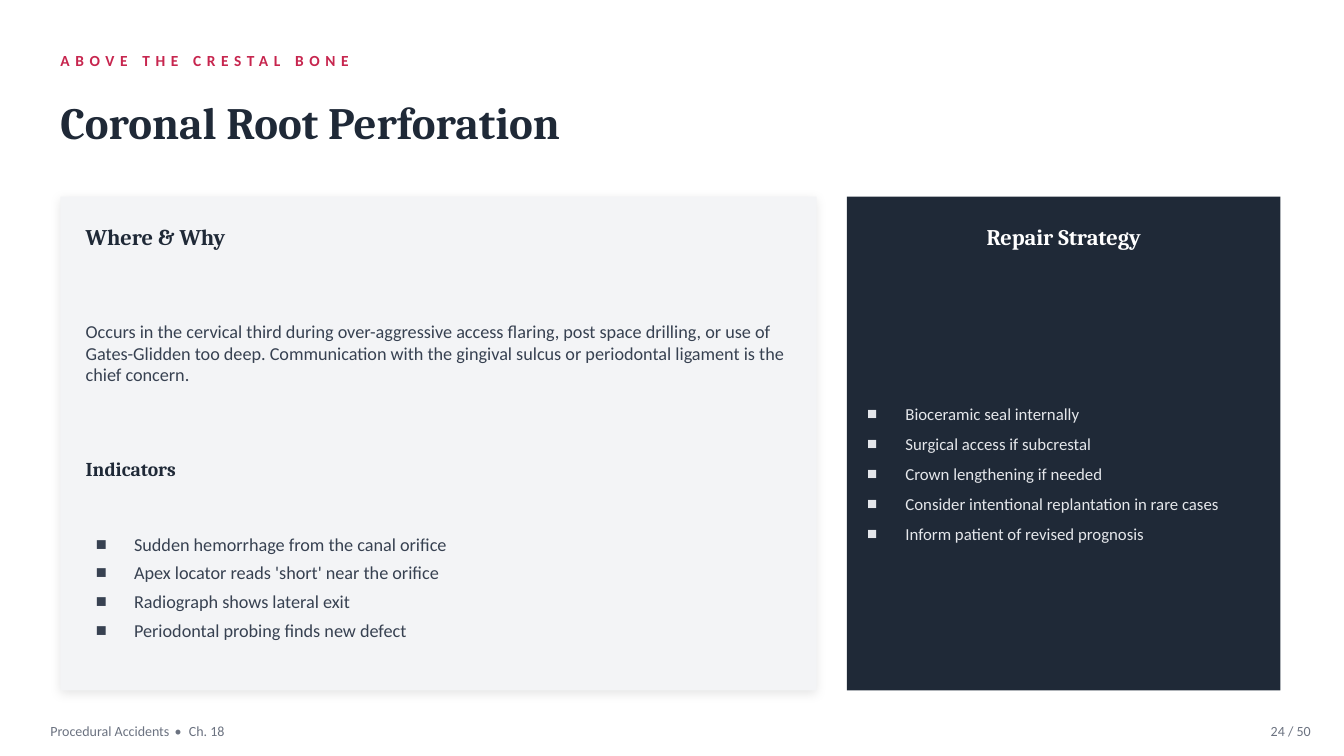
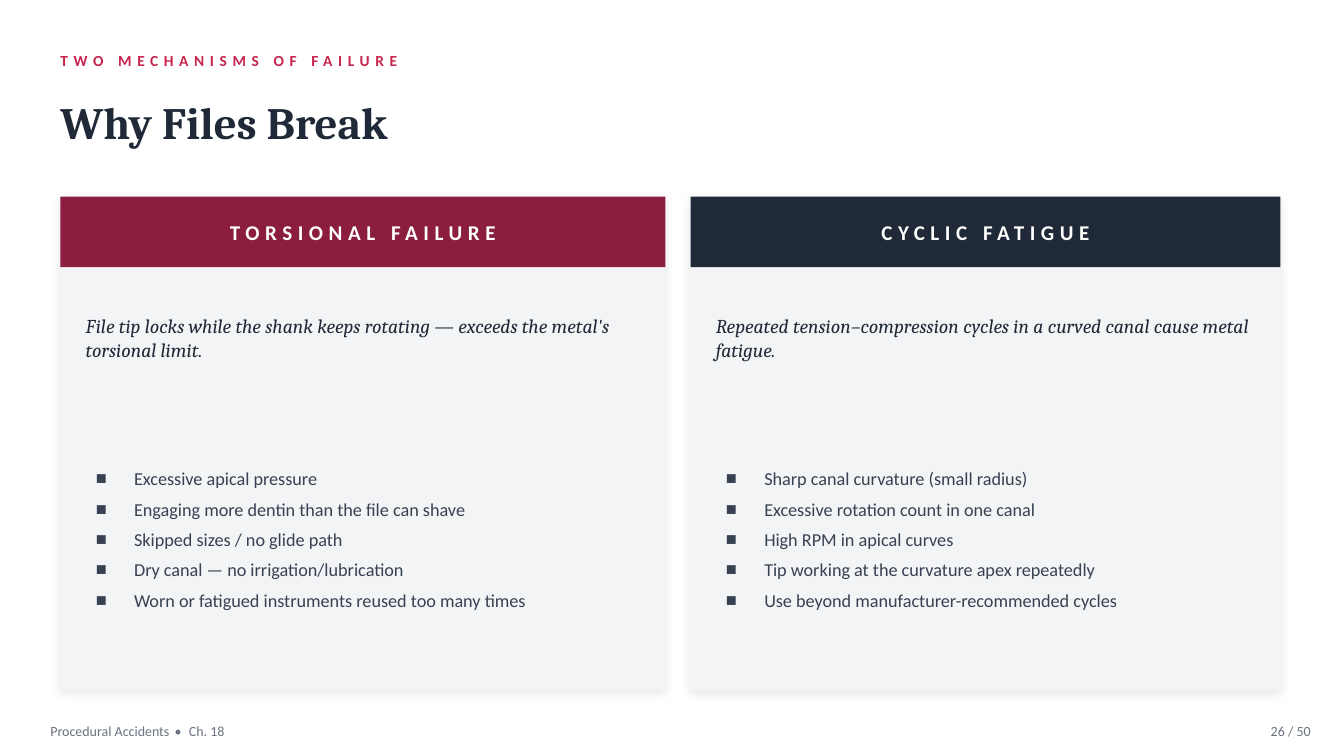
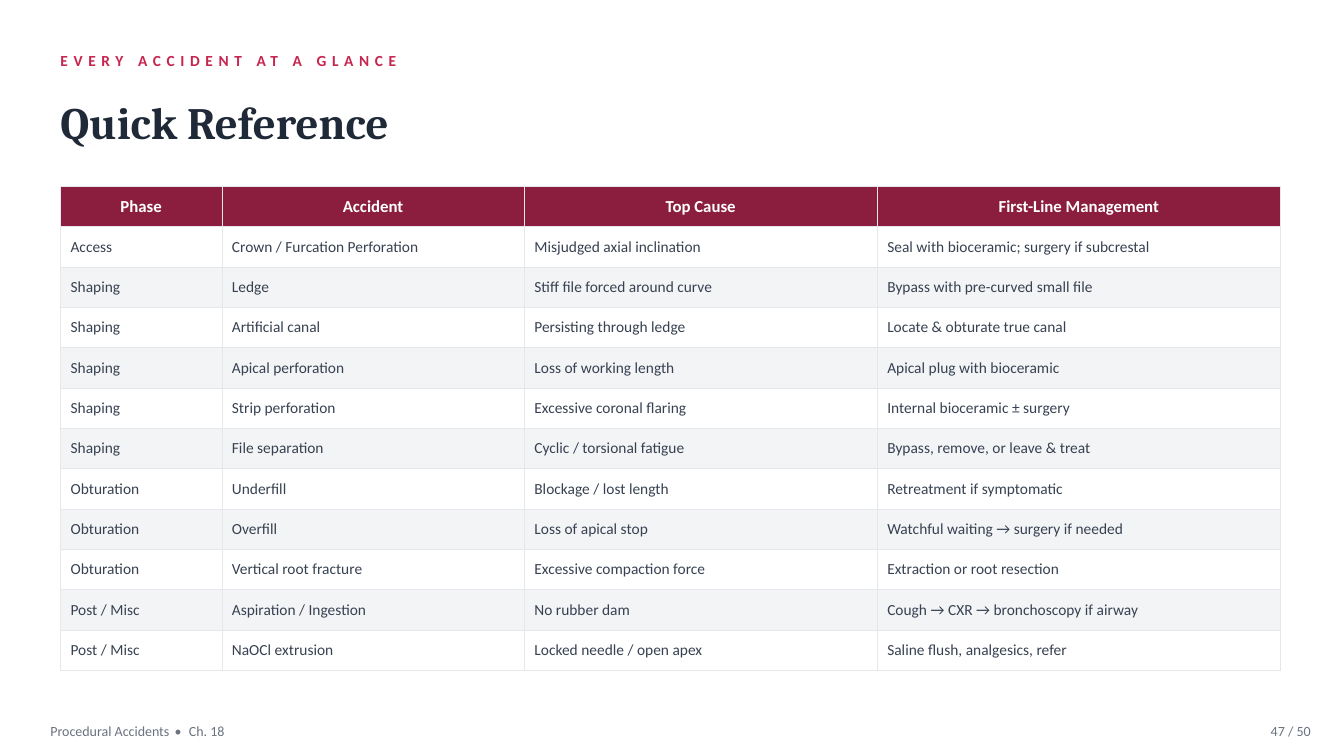
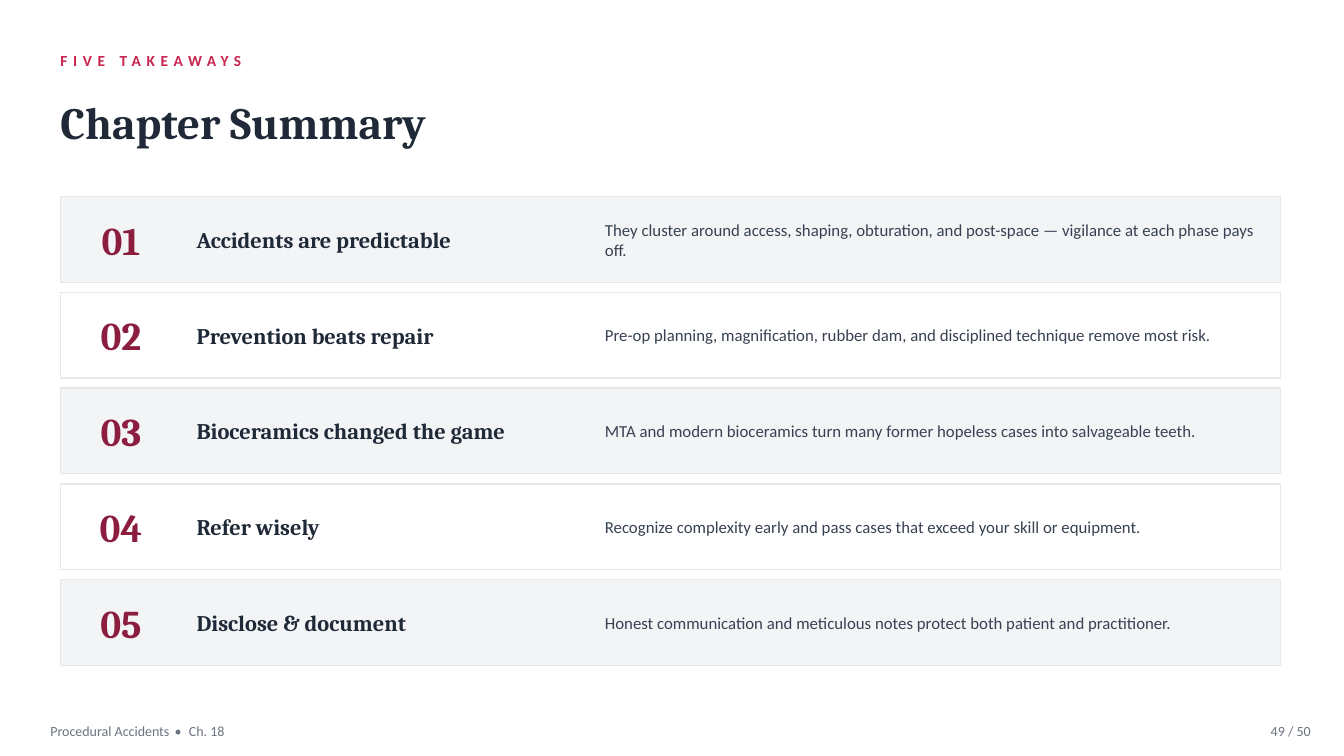
from lxml.etree import SubElement
from pptx import Presentation
from pptx.dml.color import RGBColor
from pptx.enum.shapes import MSO_SHAPE
from pptx.enum.text import MSO_ANCHOR, MSO_AUTO_SIZE, PP_ALIGN
from pptx.oxml.ns import qn
from pptx.util import Inches, Pt

# Palette and fonts
WHITE = RGBColor(0xFF, 0xFF, 0xFF)
PANEL = RGBColor(0xF3, 0xF4, 0xF6)
RULE = RGBColor(0xE5, 0xE7, 0xEB)
MUTED = RGBColor(0x6B, 0x72, 0x80)
BODY = RGBColor(0x37, 0x41, 0x51)
NAVY = RGBColor(0x1F, 0x29, 0x37)
WINE = RGBColor(0x8B, 0x1E, 0x3F)
PINK = RGBColor(0xC7, 0x25, 0x4E)
SANS, SERIF = "Calibri", "Cambria"

# Grid: ten columns and ten rows to the inch
CELL = Inches(0.1)
LEFT, CONTENT_WIDTH = 6, 121
PANEL_TOP, PANEL_HEIGHT = 19.5, 49
PADDING = 2.5

# Layouts of the default template
TWO_CONTENT, TITLE_ONLY = 3, 5


def grid(*cells):
    """Turn columns and rows into slide lengths."""
    return [round(cell * CELL) for cell in cells]


def write(frame, paragraphs, size=13, font=SANS, color=BODY, bold=False, italic=False,
          align=PP_ALIGN.LEFT, spacing=0, gap=0, bullet=None):
    """Fill a text frame; a paragraph is a string or a list of (text, spacing) runs."""
    frame.word_wrap = True
    frame.auto_size = MSO_AUTO_SIZE.NONE
    frame.vertical_anchor = MSO_ANCHOR.MIDDLE
    frame.margin_left = frame.margin_right = frame.margin_top = frame.margin_bottom = 0
    for index, content in enumerate(paragraphs):
        paragraph = frame.add_paragraph() if index else frame.paragraphs[0]
        paragraph.alignment = align
        paragraph.space_before, paragraph.space_after = Pt(0), Pt(gap)
        if bullet:
            properties = paragraph._p.get_or_add_pPr()
            properties.set("marL", str(Inches(0.38)))
            properties.set("indent", str(-Inches(0.38)))
            SubElement(properties, qn("a:buChar"), char=bullet)
        for text, run_spacing in [(content, spacing)] if isinstance(content, str) else content:
            run = paragraph.add_run()
            run.text = text
            run.font.size, run.font.name = Pt(size), font
            run.font.bold, run.font.italic = bold, italic
            run.font.color.rgb = color
            if run_spacing:
                run._r.get_or_add_rPr().set("spc", str(round(run_spacing * 100)))


class Deck:
    """Holds the presentation, its style and the current slide."""

    def __init__(self):
        self.presentation = Presentation()
        self.presentation.slide_width = Inches(13.33)
        self.presentation.slide_height = Inches(7.5)
        self.slide = None
        self.bodies = None

    def start(self, layout, kicker, title, page):
        """Add a slide with its kicker, title and footer."""
        self.slide = self.presentation.slides.add_slide(
            self.presentation.slide_layouts[layout])
        self.bodies = iter(list(self.slide.placeholders)[1:])
        self.text(kicker, (LEFT, 4.5, 120, 3), size=11, color=PINK, bold=True, spacing=4)
        self.fill_placeholder(self.slide.shapes.title, [title], (LEFT, 7.8, 120, 8.5),
                              size=32, font=SERIF, color=NAVY, bold=True)
        self.text([("Procedural Accidents", 0), (" • ", 1.5), ("Ch. 18", 0)],
                  (5, 71, 55, 3), size=10, color=MUTED)
        self.text(f"{page} / 50", (123, 71, 7, 3), size=10, color=MUTED,
                  align=PP_ALIGN.RIGHT)

    def text(self, content, box, **style):
        write(self.slide.shapes.add_textbox(*grid(*box)).text_frame, [content], **style)

    def heading(self, content, box, size=16, color=NAVY, **style):
        self.text(content, box, size=size, font=SERIF, color=color, bold=True, **style)

    def fill_placeholder(self, placeholder, paragraphs, box, **style):
        """Place a template placeholder in front of what is drawn so far."""
        placeholder.left, placeholder.top, placeholder.width, placeholder.height = grid(*box)
        placeholder.element.getparent().append(placeholder.element)
        write(placeholder.text_frame, paragraphs, **style)

    def bullets(self, items, box, **style):
        self.fill_placeholder(next(self.bodies), items, box, bullet="■", **style)

    def rectangle(self, box, fill, line=None, shadow=False):
        shape = self.slide.shapes.add_shape(MSO_SHAPE.RECTANGLE, *grid(*box))
        shape.shadow.inherit = False
        shape.fill.solid()
        shape.fill.fore_color.rgb = fill
        if line is None:
            shape.line.fill.background()
        else:
            shape.line.color.rgb, shape.line.width = line, Pt(1)
        if shadow:
            effects = shape._element.spPr.find(qn("a:effectLst"))
            outer = SubElement(effects, qn("a:outerShdw"), blurRad=str(Pt(8)),
                               dist=str(Pt(2)), dir="5400000", rotWithShape="0")
            black = SubElement(outer, qn("a:srgbClr"), val="000000")
            SubElement(black, qn("a:alpha"), val="10000")
        return shape

    def panel(self, left, width):
        self.rectangle((left, PANEL_TOP, width, PANEL_HEIGHT), PANEL, shadow=True)

    def failure_card(self, left, width, color, name, cause, factors):
        """A panel with a coloured band, a cause and a list of factors."""
        self.panel(left, width)
        band = self.rectangle((left, PANEL_TOP, width, 7), color)
        write(band.text_frame, [name], size=15, color=WHITE, bold=True, spacing=4,
              align=PP_ALIGN.CENTER)
        text_width = width - 2 * PADDING + 0.5
        self.text(cause, (left + PADDING, 28.5, text_width, 10), size=14, font=SERIF,
                  color=NAVY, italic=True)
        self.bullets(factors, (left + PADDING + 1, 40, text_width, 27), gap=6)

    def table(self, rows, widths, top, row_height):
        table = self.slide.shapes.add_table(
            len(rows), len(widths),
            *grid(LEFT, top, sum(widths), row_height * len(rows))).table
        table.first_row = table.horz_banding = False
        for column, width in zip(table.columns, grid(*widths)):
            column.width = width
        for row_index, values in enumerate(rows):
            table.rows[row_index].height = grid(row_height)[0]
            for column_index, value in enumerate(values):
                cell = table.cell(row_index, column_index)
                margins = (cell.margin_left, cell.margin_right,
                           cell.margin_top, cell.margin_bottom)
                if row_index == 0:
                    fill = WINE
                    style = dict(size=12, color=WHITE, bold=True, align=PP_ALIGN.CENTER)
                else:
                    fill = WHITE if row_index % 2 else PANEL
                    style = dict(size=11)
                self.cell_text(cell, value, margins, style)
                self.cell_borders(cell)
                cell.fill.solid()
                cell.fill.fore_color.rgb = fill

    @staticmethod
    def cell_text(cell, value, margins, style):
        write(cell.text_frame, [value], **style)
        body = cell.text_frame._txBody.bodyPr
        body.attrib.clear()
        for child in list(body):
            body.remove(child)
        cell.vertical_anchor = MSO_ANCHOR.MIDDLE
        (cell.margin_left, cell.margin_right,
         cell.margin_top, cell.margin_bottom) = margins

    @staticmethod
    def cell_borders(cell):
        properties = cell._tc.get_or_add_tcPr()
        for side in ("lnL", "lnR", "lnT", "lnB"):
            line = SubElement(properties, qn(f"a:{side}"), w=str(Pt(0.5)))
            fill = SubElement(line, qn("a:solidFill"))
            SubElement(fill, qn("a:srgbClr"), val=str(RULE))

    def takeaway(self, number, name, detail):
        """One numbered row of the summary."""
        height, pitch = 8.5, 9.5
        top = PANEL_TOP + (number - 1) * pitch
        self.rectangle((LEFT, top, CONTENT_WIDTH, height), PANEL if number % 2 else WHITE,
                       line=RULE)
        self.heading(f"{number:02}", (LEFT, top, 12, height), size=28, color=WINE,
                     align=PP_ALIGN.CENTER)
        self.heading(name, (19.5, top, 40, height))
        self.text(detail, (60, top, 66, height), size=12)


def build_perforation(deck):
    deck.start(TWO_CONTENT, "ABOVE THE CRESTAL BONE", "Coronal Root Perforation", 24)
    # Causes and indicators
    inner = LEFT + PADDING
    deck.panel(LEFT, 75)
    deck.heading("Where & Why", (inner, 21, 70, 5))
    deck.text("Occurs in the cervical third during over-aggressive access flaring, post space "
              "drilling, or use of Gates-Glidden too deep. Communication with the gingival "
              "sulcus or periodontal ligament is the chief concern.", (inner, 26.5, 70, 17))
    deck.heading("Indicators", (inner, 44.5, 70, 4), size=14)
    deck.bullets(["Sudden hemorrhage from the canal orifice",
                  "Apex locator reads 'short' near the orifice",
                  "Radiograph shows lateral exit",
                  "Periodontal probing finds new defect"],
                 (inner + 1, 48.5, 70, 19.5), gap=5)
    # Repair
    deck.rectangle((84, PANEL_TOP, 43, PANEL_HEIGHT), NAVY)
    deck.heading("Repair Strategy", (85.5, 21, 40, 5), color=WHITE, align=PP_ALIGN.CENTER)
    deck.bullets(["Bioceramic seal internally",
                  "Surgical access if subcrestal",
                  "Crown lengthening if needed",
                  "Consider intentional replantation in rare cases",
                  "Inform patient of revised prognosis"],
                 (86, 27, 40, 40), size=12, color=RULE, gap=7)


def build_failures(deck):
    deck.start(TWO_CONTENT, "TWO MECHANISMS OF FAILURE", "Why Files Break", 26)
    deck.failure_card(
        LEFT, 60, WINE, "TORSIONAL FAILURE",
        "File tip locks while the shank keeps rotating — exceeds the metal's torsional limit.",
        ["Excessive apical pressure",
         "Engaging more dentin than the file can shave",
         "Skipped sizes / no glide path",
         "Dry canal — no irrigation/lubrication",
         "Worn or fatigued instruments reused too many times"])
    deck.failure_card(
        68.5, 58.5, NAVY, "CYCLIC FATIGUE",
        "Repeated tension–compression cycles in a curved canal cause metal fatigue.",
        ["Sharp canal curvature (small radius)",
         "Excessive rotation count in one canal",
         "High RPM in apical curves",
         "Tip working at the curvature apex repeatedly",
         "Use beyond manufacturer-recommended cycles"])


def build_reference(deck):
    deck.start(TITLE_ONLY, "EVERY ACCIDENT AT A GLANCE", "Quick Reference", 47)
    deck.table([
        ("Phase", "Accident", "Top Cause", "First-Line Management"),
        ("Access", "Crown / Furcation Perforation", "Misjudged axial inclination",
         "Seal with bioceramic; surgery if subcrestal"),
        ("Shaping", "Ledge", "Stiff file forced around curve",
         "Bypass with pre-curved small file"),
        ("Shaping", "Artificial canal", "Persisting through ledge",
         "Locate & obturate true canal"),
        ("Shaping", "Apical perforation", "Loss of working length",
         "Apical plug with bioceramic"),
        ("Shaping", "Strip perforation", "Excessive coronal flaring",
         "Internal bioceramic ± surgery"),
        ("Shaping", "File separation", "Cyclic / torsional fatigue",
         "Bypass, remove, or leave & treat"),
        ("Obturation", "Underfill", "Blockage / lost length", "Retreatment if symptomatic"),
        ("Obturation", "Overfill", "Loss of apical stop",
         "Watchful waiting → surgery if needed"),
        ("Obturation", "Vertical root fracture", "Excessive compaction force",
         "Extraction or root resection"),
        ("Post / Misc", "Aspiration / Ingestion", "No rubber dam",
         "Cough → CXR → bronchoscopy if airway"),
        ("Post / Misc", "NaOCl extrusion", "Locked needle / open apex",
         "Saline flush, analgesics, refer"),
    ], widths=(16, 30, 35, 40), top=18.5, row_height=4)


def build_summary(deck):
    deck.start(TITLE_ONLY, "FIVE TAKEAWAYS", "Chapter Summary", 49)
    takeaways = [
        ("Accidents are predictable", "They cluster around access, shaping, obturation, and "
         "post-space — vigilance at each phase pays off."),
        ("Prevention beats repair", "Pre-op planning, magnification, rubber dam, and "
         "disciplined technique remove most risk."),
        ("Bioceramics changed the game", "MTA and modern bioceramics turn many former "
         "hopeless cases into salvageable teeth."),
        ("Refer wisely", "Recognize complexity early and pass cases that exceed your skill "
         "or equipment."),
        ("Disclose & document", "Honest communication and meticulous notes protect both "
         "patient and practitioner."),
    ]
    for number, (name, detail) in enumerate(takeaways, start=1):
        deck.takeaway(number, name, detail)


def main():
    deck = Deck()
    for build in (build_perforation, build_failures, build_reference, build_summary):
        build(deck)
    deck.presentation.save("out.pptx")


if __name__ == "__main__":
    main()
